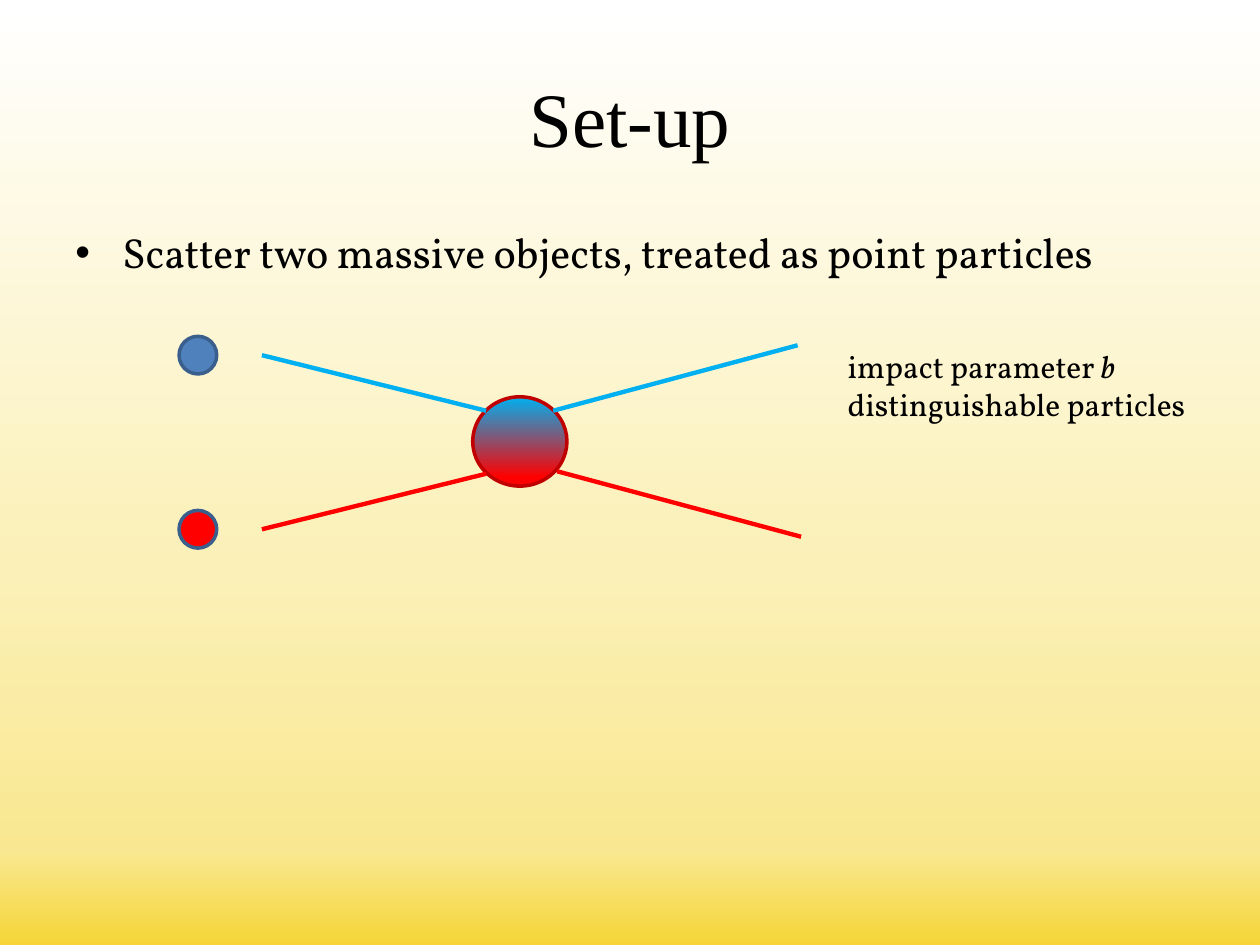
from lxml.etree import SubElement
from pptx import Presentation
from pptx.dml.color import RGBColor
from pptx.enum.shapes import MSO_CONNECTOR, MSO_SHAPE
from pptx.enum.text import MSO_ANCHOR as Anchor, PP_ALIGN as Align
from pptx.oxml.ns import qn
from pptx.util import Cm, Pt

BLACK = RGBColor(0x00, 0x00, 0x00)
WHITE = RGBColor(0xFF, 0xFF, 0xFF)
CREAM = RGBColor(0xFB, 0xF0, 0xB7)
STRAW = RGBColor(0xF9, 0xE8, 0x91)
GOLD = RGBColor(0xF5, 0xD5, 0x37)
SKY = RGBColor(0x00, 0xB0, 0xF0)
RED = RGBColor(0xFF, 0x00, 0x00)
DARK_RED = RGBColor(0xC0, 0x00, 0x00)
BLUE = RGBColor(0x4F, 0x81, 0xBD)
SLATE = RGBColor(0x3A, 0x5F, 0x8C)

TITLE = [[("Set-up", False)]]
STATEMENT = [[("Scatter two massive objects, treated as point particles", False)]]
REMARKS = [
    [("impact parameter ", False), ("b", True)],
    [("distinguishable particles", False)],
]
BACKDROP = [(0, WHITE, 100), (60, CREAM, 100), (90, STRAW, 73), (100, GOLD, 100)]
BLOB = [(0, SKY, 100), (90, RED, 100), (100, RED, 100)]
PARTICLES = [(6.78, BLUE), (10.29, RED)]
PATHS = [
    ((5.28, 7.16), (9.80, 8.28), SKY),
    ((5.28, 10.67), (9.80, 9.55), RED),
    ((11.15, 8.28), (16.08, 6.96), SKY),
    ((11.23, 9.50), (16.15, 10.82), RED),
]


def add_text(slide, paragraphs, *, at, size, font="Vollkorn", align=Align.LEFT,
             anchor=Anchor.TOP, bullet=None, indent=0):
    frame = slide.shapes.add_textbox(*map(Cm, at)).text_frame
    frame.word_wrap = True
    frame.vertical_anchor = anchor
    for number, runs in enumerate(paragraphs):
        paragraph = frame.add_paragraph() if number else frame.paragraphs[0]
        paragraph.alignment = align
        if bullet:
            properties = paragraph._p.get_or_add_pPr()
            properties.set("marL", str(Cm(indent)))
            properties.set("indent", str(-Cm(indent)))
            SubElement(properties, qn("a:buFont"), typeface="Arial")
            SubElement(properties, qn("a:buChar"), char=bullet)
        for words, italic in runs:
            run = paragraph.add_run()
            run.text = words
            run.font.name = font
            run.font.size = Pt(size)
            run.font.italic = italic
            run.font.color.rgb = BLACK


def shade_downward(fill, element, stops):
    fill.gradient()
    gradient = element.find(".//" + qn("a:gradFill"))
    stop_list = gradient.find(qn("a:gsLst"))
    for old_stop in list(stop_list):
        stop_list.remove(old_stop)
    for percent, color, opacity in stops:
        stop = SubElement(stop_list, qn("a:gs"), pos=str(percent * 1000))
        shade = SubElement(stop, qn("a:srgbClr"), val=str(color))
        if opacity < 100:
            SubElement(shade, qn("a:alpha"), val=str(opacity * 1000))
    gradient.find(qn("a:lin")).set("ang", str(90 * 60000))


def add_circle(slide, at, outline):
    circle = slide.shapes.add_shape(MSO_SHAPE.OVAL, *map(Cm, at))
    circle.shadow.inherit = False
    circle.line.color.rgb = outline
    circle.line.width = Pt(2)
    return circle


def add_path(slide, start, end, color):
    path = slide.shapes.add_connector(MSO_CONNECTOR.STRAIGHT, *map(Cm, start + end))
    path.line.color.rgb = color
    path.line.width = Pt(2.5)
    SubElement(path._element.spPr, qn("a:effectLst"))


def main():
    deck = Presentation()
    deck.slide_width, deck.slide_height = Cm(25.4), Cm(19.05)
    slide = deck.slides.add_slide(deck.slide_layouts[6])
    shade_downward(slide.background.fill, slide.element, BACKDROP)

    add_text(slide, TITLE, at=(1.27, 0.76, 22.86, 3.18), size=44,
             font="Times New Roman", align=Align.CENTER, anchor=Anchor.MIDDLE)
    add_text(slide, STATEMENT, at=(1.27, 4.45, 22.86, 13.84), size=24,
             bullet="•", indent=0.95)

    blob = add_circle(slide, (9.53, 8, 1.9, 1.8), DARK_RED)
    shade_downward(blob.fill, blob._element, BLOB)
    for start, end, color in PATHS:
        add_path(slide, start, end, color)
    for top, color in PARTICLES:
        particle = add_circle(slide, (3.61, top, 0.76, 0.76), SLATE)
        particle.fill.solid()
        particle.fill.fore_color.rgb = color

    add_text(slide, REMARKS, at=(16.84, 6.88, 8.66, 1.8), size=18)
    deck.save("out.pptx")


if __name__ == "__main__":
    main()
